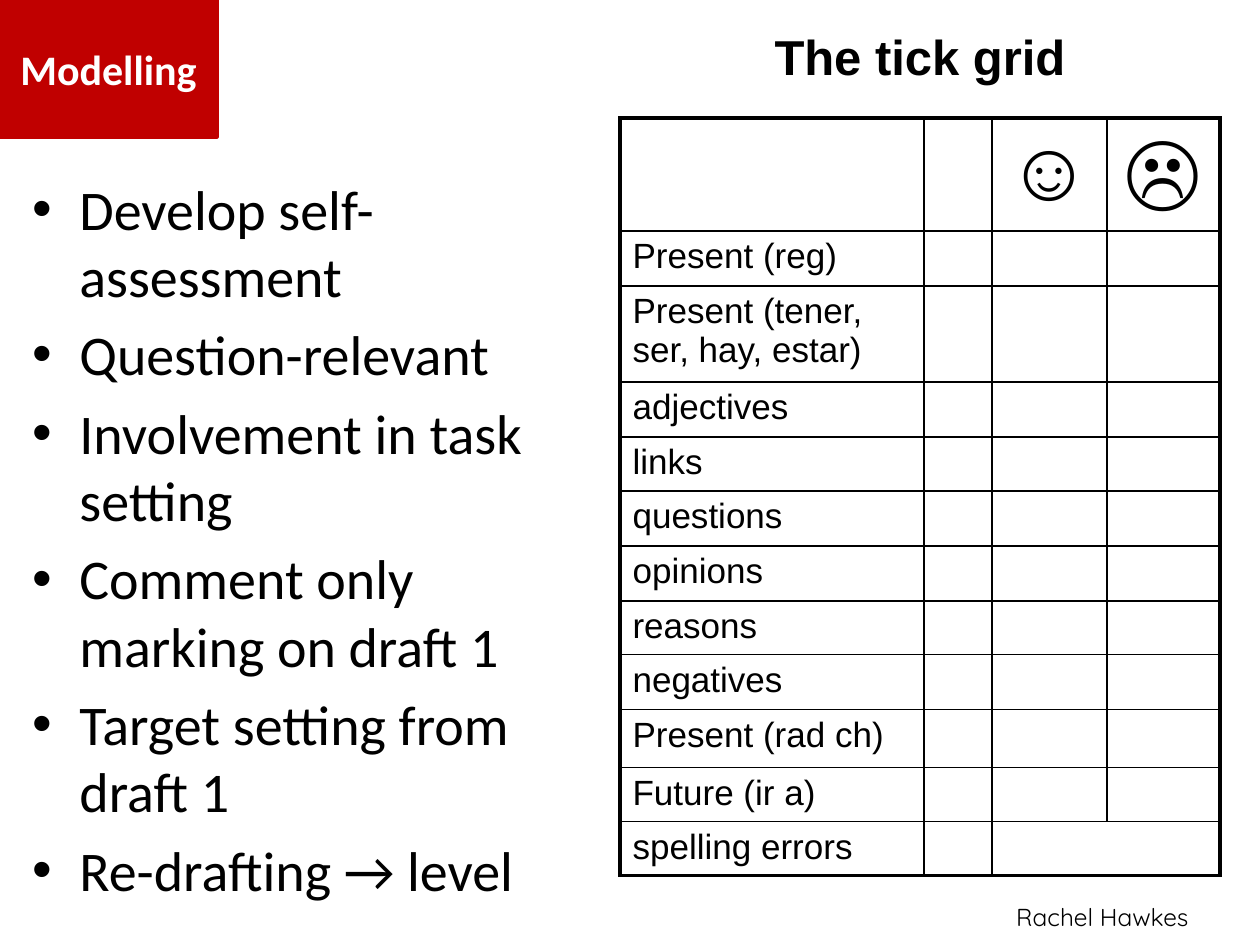
"""Build the Modelling slide with its aims and the tick grid."""
import pptx
import pptx.dml.color
import pptx.enum.shapes
import pptx.enum.text
import pptx.oxml
import pptx.oxml.ns
import pptx.util

PX = 914400 / 126
BLACK = pptx.dml.color.RGBColor(0x00, 0x00, 0x00)
WHITE = pptx.dml.color.RGBColor(0xFF, 0xFF, 0xFF)
RED = pptx.dml.color.RGBColor(0xC0, 0x00, 0x00)
ALIGN = pptx.enum.text.PP_ALIGN
THIN, THICK = 12700, 28575


def px(*lengths):
    return [pptx.util.Emu(round(length * PX)) for length in lengths]


def write(paragraph, text, align, **font_values):
    paragraph.alignment = align
    run = paragraph.add_run()
    run.text = text
    run.font.color.rgb = font_values.pop("color", BLACK)
    for name, value in font_values.items():
        setattr(run.font, name, value)


deck = pptx.Presentation()
deck.slide_width, deck.slide_height = px(1260, 945)
slide = deck.slides.add_slide(deck.slide_layouts[6])

grid_rows = [
    ("", 113), ("Present (reg)", 55), ("Present (tener, ser, hay, estar)", 96),
    ("adjectives", 55), ("links", 54), ("questions", 55), ("opinions", 55),
    ("reasons", 54), ("negatives", 55), ("Present (rad ch)", 58),
    ("Future (ir a)", 54), ("spelling errors", 54),
]
column_widths = [304, 68, 115, 113]
last_row, last_column = len(grid_rows) - 1, len(column_widths) - 1
tick_grid = slide.shapes.add_table(
    len(grid_rows), len(column_widths),
    *px(620, 118, sum(column_widths), sum(height for _, height in grid_rows)),
).table
tick_grid.first_row = tick_grid.horz_banding = False
for column, width in zip(tick_grid.columns, px(*column_widths)):
    column.width = width
tick_grid.cell(last_row, 2).merge(tick_grid.cell(last_row, 3))

for r, (topic, height) in enumerate(grid_rows):
    tick_grid.rows[r].height = px(height)[0]
    for c in range(len(column_widths)):
        cell = tick_grid.cell(r, c)
        right_column = c + (cell.span_width if cell.is_merge_origin else 1) - 1
        outer_edges = {"L": c == 0, "R": right_column == last_column,
                       "T": r == 0, "B": r == last_row}
        for side, is_outer in outer_edges.items():
            if cell.is_spanned and side == "L":
                continue
            cell._tc.get_or_add_tcPr().append(pptx.oxml.parse_xml(
                f'<a:ln{side} {pptx.oxml.ns.nsdecls("a")} w="{THICK if is_outer else THIN}">'
                f'<a:solidFill><a:srgbClr val="{BLACK}"/></a:solidFill></a:ln{side}>'))
        cell.fill.background()
    if topic:
        write(tick_grid.cell(r, 0).text_frame.paragraphs[0], topic, ALIGN.LEFT,
              name="Arial", size=pptx.util.Pt(20))
for c, face in ((2, "☺"), (3, "☹")):
    write(tick_grid.cell(0, c).text_frame.paragraphs[0], face, ALIGN.CENTER,
          name="Arial", size=pptx.util.Pt(48))

modelling = slide.shapes.add_shape(
    pptx.enum.shapes.MSO_SHAPE.RECTANGLE, *px(0, 0, 217, 137))
modelling.shadow.inherit = False
modelling.fill.solid()
modelling.fill.fore_color.rgb = modelling.line.color.rgb = RED
modelling.line.width = pptx.util.Pt(2)
modelling.text_frame.vertical_anchor = pptx.enum.text.MSO_ANCHOR.MIDDLE
write(modelling.text_frame.paragraphs[0], "Modelling", ALIGN.CENTER,
      name="Calibri", size=pptx.util.Pt(24), bold=True, color=WHITE)

captions = [
    ((610, 20, 620, 72), "The tick grid", ALIGN.CENTER,
     {"name": "Arial", "size": pptx.util.Pt(28), "bold": True}),
    ((906, 896, 295, 43), "Rachel Hawkes", ALIGN.RIGHT,
     {"name": "Quicksand", "size": pptx.util.Pt(14)}),
]
for place, wording, align, font_values in captions:
    caption = slide.shapes.add_textbox(*px(*place)).text_frame
    caption.word_wrap = True
    write(caption.paragraphs[0], wording, align, **font_values)

aims = slide.shapes.add_textbox(*px(20, 168, 538, 748)).text_frame
aims.word_wrap = True
indent = px(47)[0]
for i, aim in enumerate([
    "Develop self-assessment", "Question-relevant", "Involvement in task setting",
    "Comment only marking on draft 1", "Target setting from draft 1",
    "Re-drafting → level",
]):
    paragraph = aims.add_paragraph() if i else aims.paragraphs[0]
    write(paragraph, aim, ALIGN.LEFT, name="Calibri", size=pptx.util.Pt(32))
    paragraph.space_before = pptx.util.Pt(6.4)
    bullet_format = paragraph._p.get_or_add_pPr()
    for name, value in {"marL": indent, "indent": -indent}.items():
        bullet_format.set(name, str(value))
    for bullet in ('buFont {} typeface="Arial"', 'buChar {} char="•"'):
        bullet_format.append(pptx.oxml.parse_xml(
            f'<a:{bullet.format(pptx.oxml.ns.nsdecls("a"))}/>'))

deck.save("out.pptx")
